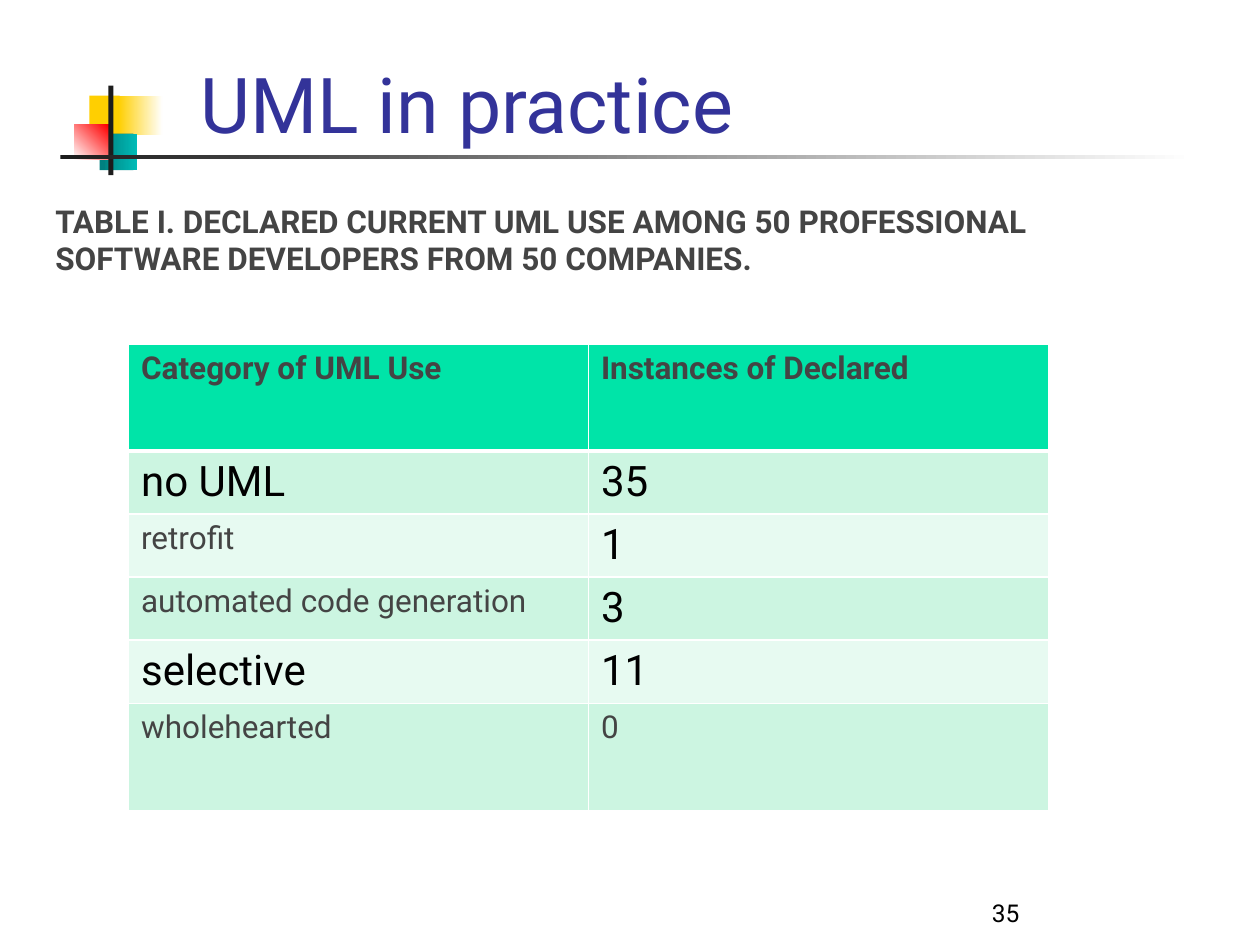
from lxml import etree
from pptx import Presentation
from pptx.dml.color import RGBColor
from pptx.enum.shapes import MSO_SHAPE
from pptx.enum.text import MSO_ANCHOR, PP_ALIGN
from pptx.oxml.ns import qn
from pptx.util import Inches, Pt

RECT = MSO_SHAPE.RECTANGLE
TOP, BOTTOM = MSO_ANCHOR.TOP, MSO_ANCHOR.BOTTOM
LEFT, RIGHT = PP_ALIGN.LEFT, PP_ALIGN.RIGHT

FONT = "Roboto"
WHITE = RGBColor(0xFF, 0xFF, 0xFF)
BLACK = RGBColor(0x00, 0x00, 0x00)
GRAY = RGBColor(0x44, 0x44, 0x44)
CHARCOAL = RGBColor(0x1C, 0x1C, 0x1C)
NAVY = RGBColor(0x33, 0x33, 0x99)
YELLOW = RGBColor(0xFF, 0xCF, 0x01)
RED = RGBColor(0xFF, 0x00, 0x00)
TEAL = RGBColor(0x00, 0x80, 0x80)
TEAL_MID = RGBColor(0x00, 0x86, 0x84)
TEAL_LIGHT = RGBColor(0x00, 0xBC, 0xB8)
HEADER_GREEN = RGBColor(0x00, 0xE4, 0xA8)
BAND_DARK = RGBColor(0xCC, 0xF5, 0xE1)
BAND_LIGHT = RGBColor(0xE7, 0xFA, 0xF1)

# left, top, width, height, colours (two make a gradient), gradient angle
ORNAMENT = [
    (0.71, 0.76, 0.24, 0.31, [YELLOW], 0),
    (0.94, 0.76, 0.35, 0.31, [YELLOW, WHITE], 0),
    (0.79, 1.06, 0.27, 0.29, [TEAL], 0),
    (0.83, 1.06, 0.26, 0.29, [TEAL_MID, TEAL_LIGHT], 0),
    (0.59, 0.99, 0.27, 0.28, [WHITE, RED], 45),
    (0.86, 0.68, 0.04, 0.71, [CHARCOAL], 0),
    (0.48, 1.23, 9, 0.03, [CHARCOAL, WHITE], 0),
]

SMALL = (18, GRAY)
LARGE = (24, BLACK)
# text and style of each cell
ROWS = [
    [("Category of UML Use", SMALL), ("Instances of Declared", SMALL)],
    [("no UML", LARGE), ("35", LARGE)],
    [("retrofit", SMALL), ("1", LARGE)],
    [("automated code generation", SMALL), ("3", LARGE)],
    [("selective", LARGE), ("11", LARGE)],
    [("wholehearted", SMALL), ("0", SMALL)],
]
COLUMN_WIDTH = 3.65
ROW_HEIGHTS = [0.85, 0.49, 0.49, 0.49, 0.49, 0.85]


def style_paragraph(p, size, color, bold=False):
    p.font.name = FONT
    p.font.size = Pt(size)
    p.font.bold = bold
    p.font.color.rgb = color


def add_block(slide, left, top, width, height, colors, angle):
    sp = slide.shapes.add_shape(
        RECT, Inches(left), Inches(top), Inches(width), Inches(height))
    sp.shadow.inherit = False
    sp.line.fill.background()
    if len(colors) == 1:
        sp.fill.solid()
        sp.fill.fore_color.rgb = colors[0]
        return
    sp.fill.gradient()
    sp.fill.gradient_angle = angle
    for stop, color, position in zip(sp.fill.gradient_stops, colors, (0, 1)):
        stop.color.rgb = color
        stop.position = position


def add_text(slide, left, top, width, height, lines, size, color,
             bold=False, anchor=TOP, align=LEFT):
    box = slide.shapes.add_textbox(
        Inches(left), Inches(top), Inches(width), Inches(height))
    tf = box.text_frame
    tf.word_wrap = True
    tf.vertical_anchor = anchor
    tf.text = "\n".join(lines)
    for p in tf.paragraphs:
        p.alignment = align
        style_paragraph(p, size, color, bold)


def set_borders(cell, top=1, bottom=1):
    """Draw white cell borders; widths are in points."""
    tc_pr = cell._tc.get_or_add_tcPr()
    for side, width in (("L", 1), ("R", 1), ("T", top), ("B", bottom)):
        ln = etree.SubElement(tc_pr, qn(f"a:ln{side}"), w=str(Pt(width)))
        fill = etree.SubElement(ln, qn("a:solidFill"))
        etree.SubElement(fill, qn("a:srgbClr"), val=str(WHITE))


def add_usage_table(slide, left, top):
    columns = len(ROWS[0])
    table = slide.shapes.add_table(
        len(ROWS), columns, Inches(left), Inches(top),
        Inches(COLUMN_WIDTH * columns), Inches(sum(ROW_HEIGHTS))).table
    for column in table.columns:
        column.width = Inches(COLUMN_WIDTH)
    for i, (row, height) in enumerate(zip(ROWS, ROW_HEIGHTS)):
        table.rows[i].height = Inches(height)
        header = i == 0
        band = HEADER_GREEN if header else BAND_DARK if i % 2 else BAND_LIGHT
        for j, (text, (size, color)) in enumerate(row):
            cell = table.cell(i, j)
            set_borders(cell, top=3 if i == 1 else 1, bottom=3 if header else 1)
            cell.fill.solid()
            cell.fill.fore_color.rgb = band
            cell.text = text
            style_paragraph(cell.text_frame.paragraphs[0], size, color, header)


def main():
    prs = Presentation()
    prs.slide_width, prs.slide_height = Inches(10), Inches(7.5)
    slide = prs.slides.add_slide(prs.slide_layouts[6])
    for block in ORNAMENT:
        add_block(slide, *block)
    add_text(slide, 1.49, -0.02, 8.52, 1.25, ["UML in practice"], 44, NAVY,
             anchor=BOTTOM)
    add_text(slide, 6.11, 7.16, 2.08, 0.25, ["35"], 14, BLACK,
             anchor=BOTTOM, align=RIGHT)
    add_text(slide, 0.34, 1.55, 9.65, 0.71,
             ["TABLE I. DECLARED CURRENT UML USE AMONG 50 PROFESSIONAL",
              "SOFTWARE DEVELOPERS FROM 50 COMPANIES."], 18, GRAY, bold=True)
    add_usage_table(slide, 1.02, 2.73)
    prs.save("out.pptx")


if __name__ == "__main__":
    main()
